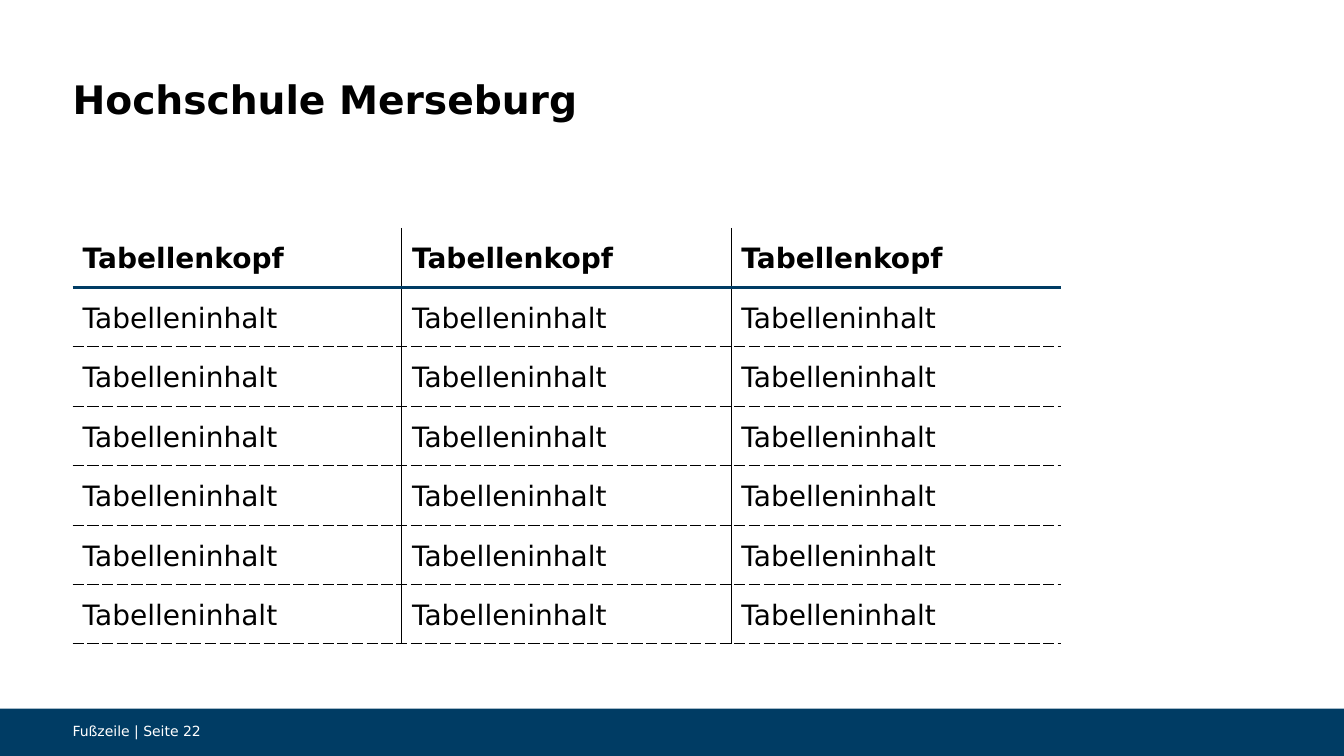
from lxml.etree import SubElement, Element
from pptx import Presentation
from pptx.dml.color import RGBColor
from pptx.enum.shapes import MSO_SHAPE
from pptx.enum.text import MSO_ANCHOR, MSO_AUTO_SIZE, PP_ALIGN
from pptx.oxml.ns import qn
from pptx.util import Inches, Pt

FONT = "DejaVu Sans"
NAVY, BLACK, WHITE = "003C64", "000000", "FFFFFF"
MARGIN = 0.72
HEADERS = ["Tabellenkopf"] * 3
BODY_ROWS = [["Tabelleninhalt"] * 3] * 6
THIN = (BLACK, 0.75, "solid")
DASHED = (BLACK, 0.75, "dash")
HEADER_RULE = (NAVY, 2.25, "solid")


def color(value):
    """Turn a hex string into a color."""
    return RGBColor.from_string(value)


def style_text(paragraph, text, size, fill=BLACK, bold=False):
    """Fill a paragraph with left-aligned text in the slide font."""
    paragraph.text = text
    paragraph.alignment = PP_ALIGN.LEFT
    font = paragraph.font
    font.name, font.size, font.bold = FONT, Pt(size), bold
    font.color.rgb = color(fill)


def clear_margins(frame):
    """Remove the insets of a text frame and wrap its text."""
    frame.margin_left = frame.margin_right = 0
    frame.margin_top = frame.margin_bottom = 0
    frame.word_wrap = True


def set_borders(cell, borders):
    """Give a cell its left, right, top and bottom borders."""
    properties = cell._tc.get_or_add_tcPr()
    for index, (side, border) in enumerate(zip("LRTB", borders)):
        line = Element(qn(f"a:ln{side}"))
        if border:
            hex_color, width, dash = border
            line.set("w", str(Pt(width)))
            fill = SubElement(line, qn("a:solidFill"))
            SubElement(fill, qn("a:srgbClr"), val=hex_color)
            SubElement(line, qn("a:prstDash"), val=dash)
        else:
            SubElement(line, qn("a:noFill"))
        properties.insert(index, line)


def add_title(slide, left, top, width, height, text):
    """Place the slide title in its box."""
    title = slide.shapes.title
    title.left, title.top = Inches(left), Inches(top)
    title.width, title.height = Inches(width), Inches(height)
    frame = title.text_frame
    clear_margins(frame)
    frame.auto_size = MSO_AUTO_SIZE.NONE
    frame.vertical_anchor = MSO_ANCHOR.TOP
    paragraph = frame.paragraphs[0]
    style_text(paragraph, text, 28, bold=True)
    paragraph.line_spacing = Pt(38.4)


def add_content_table(slide, left, top, width, height):
    """Add the table with a ruled header and dashed row lines."""
    rows = [HEADERS, *BODY_ROWS]
    last_column = len(HEADERS) - 1
    table = slide.shapes.add_table(
        len(rows), len(HEADERS), Inches(left), Inches(top), Inches(width), Inches(height)
    ).table
    table.first_row = table.horz_banding = False
    for row, texts in enumerate(rows):
        above = (None, HEADER_RULE)[row] if row < 2 else DASHED
        below = DASHED if row else HEADER_RULE
        for column, text in enumerate(texts):
            cell = table.cell(row, column)
            cell.fill.background()
            cell.vertical_anchor = MSO_ANCHOR.MIDDLE
            paragraph = cell.text_frame.paragraphs[0]
            style_text(paragraph, text, 20, bold=row == 0)
            paragraph.line_spacing = 1.1
            before = THIN if column else None
            after = THIN if column < last_column else None
            set_borders(cell, (before, after, above, below))


def add_footer(slide, left, top, width, height, text):
    """Add the footer band and its text."""
    band = slide.shapes.add_shape(
        MSO_SHAPE.RECTANGLE, Inches(left), Inches(top), Inches(width), Inches(height)
    )
    band.shadow.inherit = False
    band.fill.solid()
    band.fill.fore_color.rgb = color(NAVY)
    band.line.fill.background()
    label = slide.shapes.add_textbox(
        Inches(left + MARGIN), Inches(top + 0.14), Inches(8.35), Inches(0.17)
    )
    clear_margins(label.text_frame)
    style_text(label.text_frame.paragraphs[0], text, 10, WHITE)


def main():
    """Build and save the slide."""
    presentation = Presentation()
    presentation.slide_width, presentation.slide_height = Inches(13.33), Inches(7.5)
    slide = presentation.slides.add_slide(presentation.slide_layouts[5])
    add_footer(slide, 0, 7.03, 13.33, 0.47, "Fußzeile | Seite 22")
    add_content_table(slide, MARGIN, 2.26, 9.8, 4.13)
    add_title(slide, MARGIN, 0.68, 11.89, 0.94, "Hochschule Merseburg")
    presentation.save("out.pptx")


if __name__ == "__main__":
    main()
